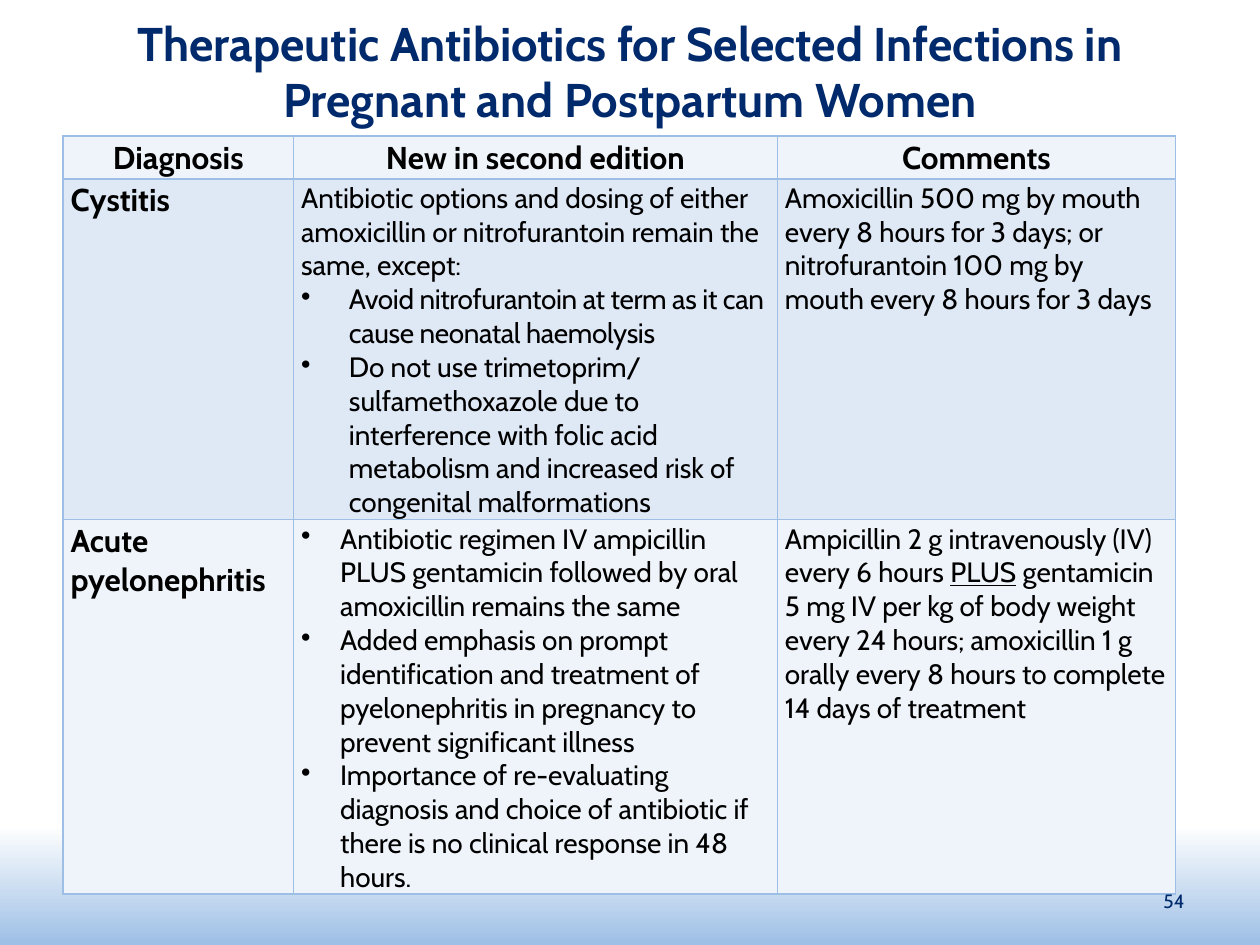
import pptx
import pptx.util
import pptx.dml.color
import pptx.enum.shapes
import pptx.enum.text
import pptx.oxml
import pptx.oxml.ns

Inches, Pt = pptx.util.Inches, pptx.util.Pt
RGB = pptx.dml.color.RGBColor.from_string
ALIGN = pptx.enum.text.PP_ALIGN
ANCHOR = pptx.enum.text.MSO_ANCHOR
NS = pptx.oxml.ns.nsdecls("a")
COLORS = {"navy": "002A6C", "text": "000000", "line": "9DBFE5",
          "pale": "EFF4FA", "band": "DFE8F5", "white": "FFFFFF"}


def add_run(p, text, color, **font):
    r = p.add_run()
    r.text = text
    r.font.name = "Cabin"
    r.font.color.rgb = RGB(COLORS[color])
    for name, value in font.items():
        setattr(r.font, name, value)
    return r


def add_label(box, text, align, **font):
    """Add a navy, vertically centred text box at box (inches)."""
    tf = s.shapes.add_textbox(*map(Inches, box)).text_frame
    tf.word_wrap = True
    tf.vertical_anchor = ANCHOR.MIDDLE
    p = tf.paragraphs[0]
    p.alignment = align
    add_run(p, text, "navy", **font)


prs = pptx.Presentation()
prs.slide_width, prs.slide_height = Inches(10), Inches(7.5)
s = prs.slides.add_slide(prs.slide_layouts[6])

# Background fade
sp = s.shapes.add_shape(pptx.enum.shapes.MSO_SHAPE.RECTANGLE,
                        Inches(0), Inches(2.75), Inches(10), Inches(4.75))
sp.shadow.inherit = False
sp.line.fill.background()
sp.fill.gradient()
sp.fill.gradient_angle = 270
for stop, position, color in zip(sp.fill.gradient_stops, (0.8, 1), ("white", "line")):
    stop.position = position
    stop.color.rgb = RGB(COLORS[color])

add_label((0.5, 0.25, 9, 0.62),
          "Therapeutic Antibiotics for Selected Infections in Pregnant and Postpartum Women",
          ALIGN.CENTER, size=Pt(27), bold=True)

# Each cell is a list of paragraphs; each paragraph is a list of runs
rows = [
    [[["Diagnosis"]], [["New in second edition"]], [["Comments"]]],
    [[["Cystitis"]],
     [["Antibiotic options and dosing of either amoxicillin or nitrofurantoin "
       "remain the same, except:"],
      ["• Avoid nitrofurantoin at term as it can cause neonatal haemolysis"],
      ["• Do not use trimetoprim/ sulfamethoxazole due to interference with folic acid "
       "metabolism and increased risk of congenital malformations"]],
     [["Amoxicillin 500 mg by mouth every 8 hours for 3 days; or nitrofurantoin 100 mg "
       "by mouth every 8 hours for 3 days"]]],
    [[["Acute pyelonephritis"]],
     [["• Antibiotic regimen IV ampicillin PLUS gentamicin followed by oral amoxicillin "
       "remains the same"],
      ["• Added emphasis on prompt identification and treatment of pyelonephritis in "
       "pregnancy to prevent significant illness"],
      ["• Importance of re-evaluating diagnosis and choice of antibiotic if there is no "
       "clinical response in 48 hours."]],
     [["Ampicillin 2 g intravenously (IV) every 6 hours ", "PLUS",
       " gentamicin 5 mg IV per kg of body weight every 24 hours; amoxicillin 1 g orally "
       "every 8 hours to complete 14 days of treatment"]]],
]
row_heights = (0.32, 2.61, 2.8)
row_fills = ("pale", "band", "pale")
bullet_indents = (0, 0.38, 0.31)
margins = {"margin_left": 0.06, "margin_right": 0.06,
           "margin_top": 0.02, "margin_bottom": 0.02}

table = s.shapes.add_table(3, 3, Inches(0.5), Inches(1.08), Inches(8.83), Inches(5.73)).table
for column, width in zip(table.columns, (1.83, 3.84, 3.16)):
    column.width = Inches(width)

for i, row in enumerate(rows):
    table.rows[i].height = Inches(row_heights[i])
    for j, paragraphs in enumerate(row):
        cell = table.cell(i, j)
        for name, value in margins.items():
            setattr(cell, name, Inches(value))
        cell.fill.solid()
        cell.fill.fore_color.rgb = RGB(COLORS[row_fills[i]])
        tcPr = cell._tc.get_or_add_tcPr()
        for k, side in enumerate(("lnL", "lnR", "lnT", "lnB")):
            tcPr.insert(k, pptx.oxml.parse_xml(
                f'<a:{side} {NS} w="{Pt(1)}"><a:solidFill>'
                f'<a:srgbClr val="{COLORS["line"]}"/></a:solidFill></a:{side}>'))

        heading = i == 0 or j == 0
        for n, runs in enumerate(paragraphs):
            tf = cell.text_frame
            p = tf.add_paragraph() if n else tf.paragraphs[0]
            p.alignment = ALIGN.CENTER if i == 0 else ALIGN.LEFT
            if runs[0].startswith("• "):
                pPr = p._p.get_or_add_pPr()
                indent = Inches(bullet_indents[i])
                pPr.set("marL", str(indent))
                pPr.set("indent", str(-indent))
                pPr.append(pptx.oxml.parse_xml(f'<a:buChar {NS} char="•"/>'))
            for text in runs:
                r = add_run(p, text.removeprefix("• "), "text", bold=heading,
                            size=Pt(18 if heading else 16), underline=text == "PLUS")
                if "Avoid" in text:
                    r.font._element.set("spc", "-20")

add_label((7.17, 6.95, 2.33, 0.4), "54", ALIGN.RIGHT, size=Pt(11))

prs.save("out.pptx")
